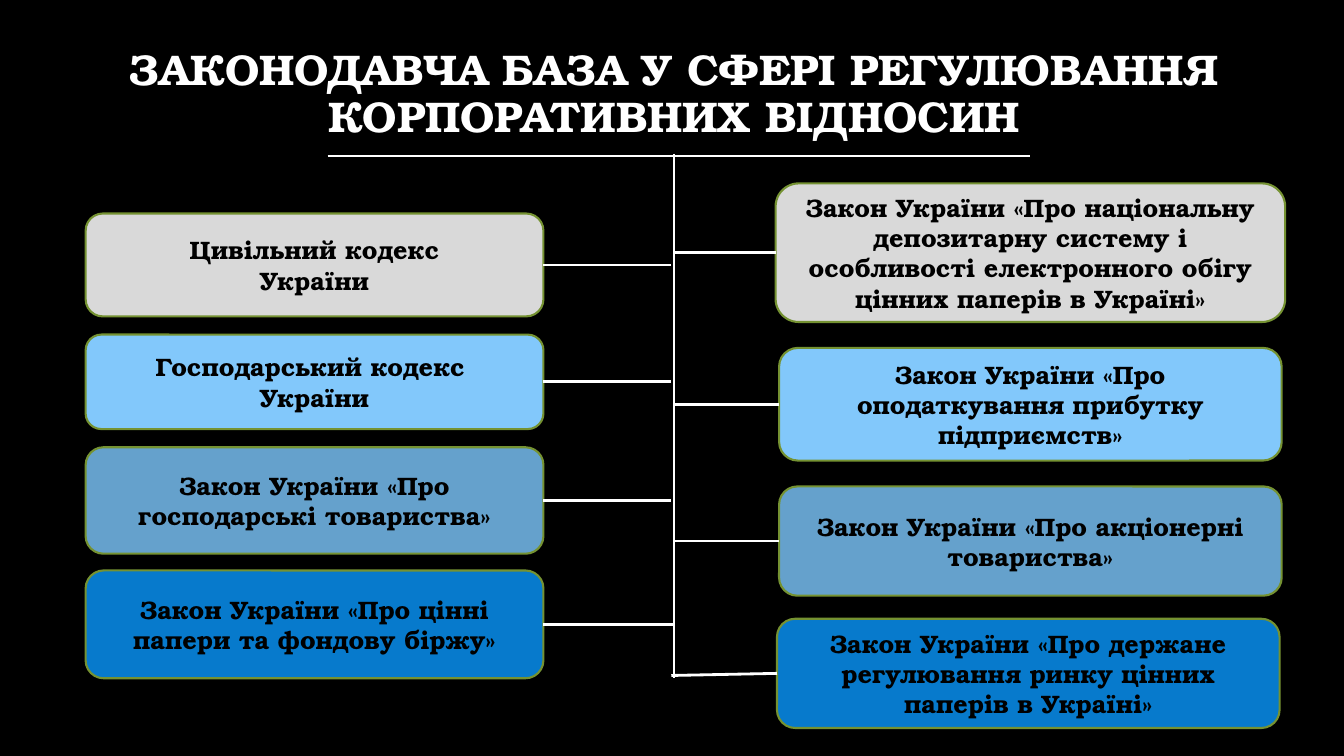
from pptx import Presentation
from pptx.dml.color import RGBColor
from pptx.enum.shapes import MSO_CONNECTOR, MSO_SHAPE
from pptx.enum.text import MSO_ANCHOR, PP_ALIGN
from pptx.oxml.ns import qn
from pptx.util import Pt
from lxml.etree import SubElement

FONT = "TeX Gyre Bonum"
COLORS = {
    "background": "000000",
    "title": "FFFFFF",
    "text": "000000",
    "line": "FFFFFF",
    "border": "759232",
    "grey": "D9D9D9",
    "light": "82C8FB",
    "medium": "65A1CC",
    "dark": "077ACC",
}


def add_text(tf, lines, size, color, spacing=None):
    tf.word_wrap = True
    tf.vertical_anchor = MSO_ANCHOR.MIDDLE
    for i, line in enumerate(lines):
        p = tf.paragraphs[0] if i == 0 else tf.add_paragraph()
        p.alignment = PP_ALIGN.CENTER
        if spacing:
            p.line_spacing = spacing
        r = p.add_run()
        r.text = line
        r.font.name = FONT
        r.font.size = Pt(size)
        r.font.bold = True
        r.font.color.rgb = RGBColor.from_string(COLORS[color])


def add_line(x1, y1, x2, y2):
    line = s.shapes.add_connector(MSO_CONNECTOR.STRAIGHT, Pt(x1), Pt(y1), Pt(x2), Pt(y2))
    line.line.color.rgb = RGBColor.from_string(COLORS["line"])
    line.line.width = Pt(2)
    SubElement(line._element.spPr, qn("a:effectLst"))


prs = Presentation()
prs.slide_width, prs.slide_height = Pt(960), Pt(540)
s = prs.slides.add_slide(prs.slide_layouts[6])
s.background.fill.solid()
s.background.fill.fore_color.rgb = RGBColor.from_string(COLORS["background"])

# Title
title = s.shapes.add_textbox(Pt(74), Pt(16), Pt(815), Pt(104))
add_text(title.text_frame, ["ЗАКОНОДАВЧА БАЗА У СФЕРІ РЕГУЛЮВАННЯ КОРПОРАТИВНИХ ВІДНОСИН"],
         30.6, "title", 0.9)

# Laws: left, top, width, height, fill, end of branch (x, y), lines
laws = [
    (61.2, 152.5, 327, 73.5, "grey", (479.5, 189.25), ["Цивільний кодекс", "України"]),
    (61.2, 239, 327, 67.5, "light", (479.5, 272.5), ["Господарський кодекс ", "України"]),
    (61.2, 319.5, 327, 76, "medium", (479.5, 357.3), ["Закон України «Про господарські товариства»"]),
    (61.2, 407.5, 327, 77, "dark", (481.5, 446), ["Закон України «Про цінні папери та фондову біржу»"]),
    (554, 131, 364, 99, "grey", (482, 180.5),
     ["Закон України «Про національну депозитарну систему і особливості "
      "електронного обігу цінних паперів в Україні»"]),
    (556.5, 248.5, 359, 80.5, "light", (480.5, 288.75),
     ["Закон України «Про оподаткування прибутку підприємств»"]),
    (556.5, 347.5, 359, 78, "medium", (481.5, 386.5), ["Закон України «Про акціонерні товариства»"]),
    (555, 442, 359, 78, "dark", (479.5, 482.5),
     ["Закон України «Про держане регулювання ринку цінних паперів в Україні»"]),
]
for left, top, width, height, fill, end, lines in laws:
    sp = s.shapes.add_shape(MSO_SHAPE.ROUNDED_RECTANGLE, Pt(left), Pt(top), Pt(width), Pt(height))
    sp.shadow.inherit = False
    sp.fill.solid()
    sp.fill.fore_color.rgb = RGBColor.from_string(COLORS[fill])
    sp.line.color.rgb = RGBColor.from_string(COLORS["border"])
    sp.line.width = Pt(1.5)
    add_text(sp.text_frame, lines, 18, "text")
    # Branch from the inner edge to the trunk
    edge = left + width if left < end[0] else left
    add_line(edge, end[1] if end[1] < 482 else top + height / 2, *end)

# Trunk and title rule
add_line(481.5, 110, 481.5, 484.5)
add_line(234, 111.5, 736, 111.5)

prs.save("out.pptx")
